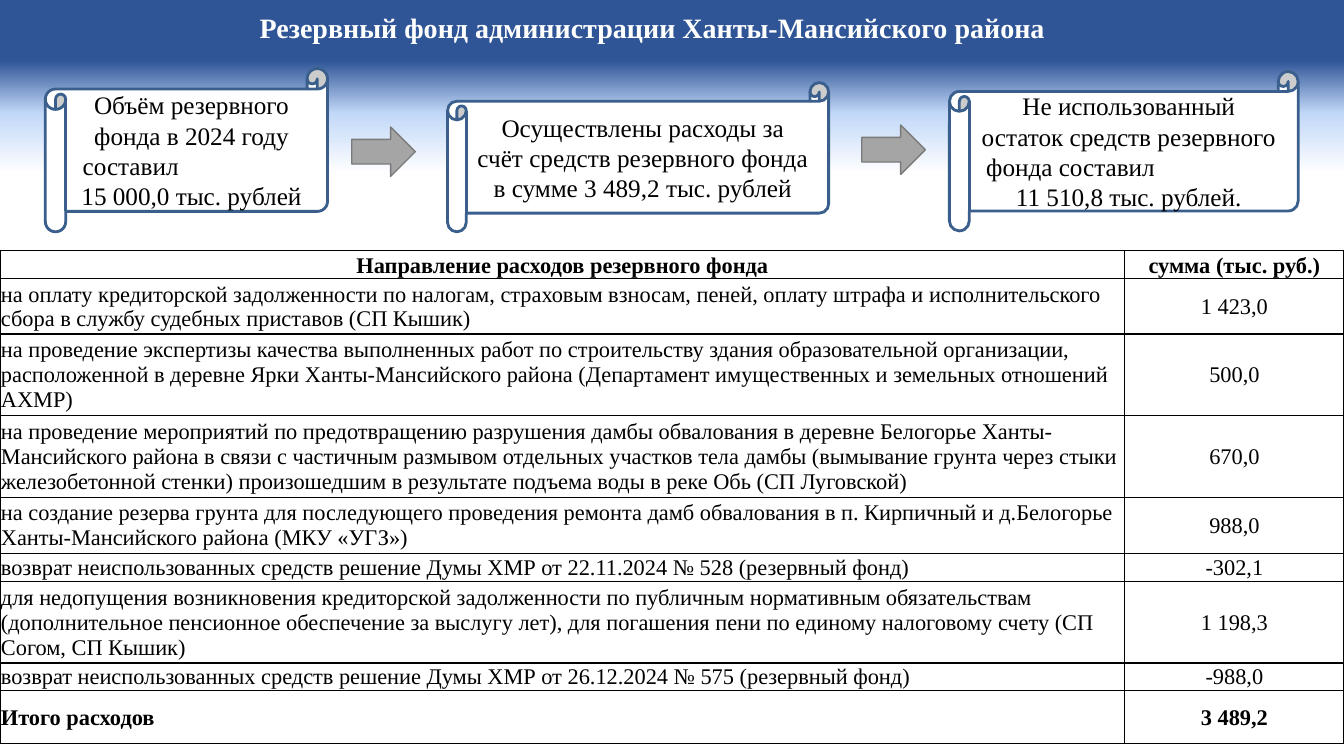
"""Build the slide on the reserve fund of the district administration."""
from copy import deepcopy

from lxml import etree
from pptx import Presentation
from pptx.dml.color import RGBColor
from pptx.enum.shapes import MSO_SHAPE
from pptx.enum.text import MSO_ANCHOR, MSO_AUTO_SIZE, PP_ALIGN
from pptx.oxml import parse_xml
from pptx.oxml.ns import nsdecls, qn
from pptx.util import Pt

SCROLL, ARROW = MSO_SHAPE.HORIZONTAL_SCROLL, MSO_SHAPE.RIGHT_ARROW
MIDDLE, BOTTOM = MSO_ANCHOR.MIDDLE, MSO_ANCHOR.BOTTOM
LEFT, CENTER = PP_ALIGN.LEFT, PP_ALIGN.CENTER
FIT_SHAPE = MSO_AUTO_SIZE.SHAPE_TO_FIT_TEXT
FONT = "Times New Roman"
NAVY = RGBColor(0x2F, 0x55, 0x97)
PALE = RGBColor(0xC2, 0xD8, 0xF8)
WHITE = RGBColor(0xFF, 0xFF, 0xFF)
BLACK = RGBColor(0x00, 0x00, 0x00)
OUTLINE = RGBColor(0x3A, 0x5F, 0x8C)
GREY = RGBColor(0xA5, 0xA5, 0xA5)
DARK_GREY = RGBColor(0x7A, 0x7A, 0x7A)


def format_text(p, size, color=BLACK, bold=False, align=CENTER):
    p.alignment = align
    for r in p.runs:
        r.font.name = FONT
        r.font.size = Pt(size)
        r.font.bold = bold
        r.font.color.rgb = color


def add_box(s, kind, box, fill, line, weight):
    sp = s.shapes.add_shape(kind, *[Pt(v) for v in box])
    sp.shadow.inherit = False
    sp.fill.solid()
    sp.fill.fore_color.rgb = fill
    sp.line.color.rgb = line
    sp.line.width = Pt(weight)
    return sp


prs = Presentation()
prs.slide_width, prs.slide_height = Pt(960), Pt(540)
s = prs.slides.add_slide(prs.slide_layouts[5])

fill = s.background.fill
fill.gradient()
fill.gradient_angle = 270
gs_list = s.element.find(".//" + qn("a:gsLst"))
gs_list.append(deepcopy(gs_list[-1]))
for stop, (position, color) in zip(fill.gradient_stops, [(0.08, NAVY), (0.15, PALE), (0.23, WHITE)]):
    stop.position = position
    stop.color.rgb = color

title = s.shapes.title
title.left, title.top, title.width, title.height = Pt(106), Pt(3.6), Pt(720), Pt(31.5)
tf = title.text_frame
tf.text = "Резервный фонд администрации Ханты-Мансийского района"
tf.word_wrap = True
tf.auto_size = FIT_SHAPE
format_text(tf.paragraphs[0], 20, WHITE, bold=True)

scrolls = [
    ((32.4, 49, 201.6, 116.6),
     [("Объём резервного фонда в 2024 году", CENTER), ("составил", LEFT), ("15 000,0 тыс. рублей", CENTER)]),
    ((319.7, 59, 272.2, 106.6),
     [("Осуществлены расходы за счёт средств резервного фонда в сумме 3 489,2 тыс. рублей", CENTER)]),
    ((678.2, 51.1, 249.1, 113.8),
     [("Не использованный остаток средств резервного", CENTER), ("фонда составил", LEFT),
      ("11 510,8 тыс. рублей.", CENTER)]),
]
for box, lines in scrolls:
    tf = add_box(s, SCROLL, box, WHITE, OUTLINE, 2).text_frame
    tf.word_wrap = True
    tf.vertical_anchor = MIDDLE
    for i, (text, align) in enumerate(lines):
        p = tf.paragraphs[0] if i == 0 else tf.add_paragraph()
        p.text = text
        format_text(p, 18, align=align)
        if align == LEFT:
            p._p.get_or_add_pPr().set("marL", str(Pt(5)))

for left, top in [(251.3, 90.7), (615.6, 89.3)]:
    add_box(s, ARROW, (left, top, 45.4, 35.3), GREY, DARK_GREY, 1)

rows = [
    ("Направление расходов резервного фонда", "сумма (тыс. руб.)", 20),
    ("на оплату кредиторской задолженности по налогам, страховым взносам, пеней, оплату штрафа и "
     "исполнительского сбора в службу судебных приставов (СП Кышик)", "1 423,0", 39.4),
    ("на проведение экспертизы качества выполненных работ по строительству здания образовательной "
     "организации, расположенной в деревне Ярки Ханты-Мансийского района (Департамент имущественных "
     "и земельных отношений АХМР)", "500,0", 58),
    ("на проведение мероприятий по предотвращению разрушения дамбы обвалования в деревне Белогорье "
     "Ханты-Мансийского района в связи с частичным размывом отдельных участков тела дамбы (вымывание "
     "грунта через стыки железобетонной стенки) произошедшим в результате подъема воды в реке Обь "
     "(СП Луговской)", "670,0", 58.4),
    ("на создание резерва грунта для последующего проведения ремонта дамб обвалования в п. Кирпичный "
     "и д.Белогорье Ханты-Мансийского района (МКУ «УГЗ»)", "988,0", 40),
    ("возврат неиспользованных средств решение Думы ХМР от 22.11.2024 № 528 (резервный фонд)",
     "-302,1", 19.6),
    ("для недопущения возникновения кредиторской задолженности по публичным нормативным обязательствам "
     "(дополнительное пенсионное обеспечение за выслугу лет), для погашения пени по единому налоговому "
     "счету (СП Согом, СП Кышик)", "1 198,3", 58.4),
    ("возврат неиспользованных средств решение Думы ХМР от 26.12.2024 № 575 (резервный фонд)",
     "-988,0", 19.8),
    ("Итого расходов", "3 489,2", 37.6),
]
last = len(rows) - 1
height = sum(row[2] for row in rows)
table = s.shapes.add_table(len(rows), 2, Pt(0), Pt(179.2), Pt(960), Pt(height)).table
table.first_row = table.horz_banding = False
table.columns[0].width, table.columns[1].width = Pt(803.5), Pt(156.5)
border = parse_xml(
    f'<a:ln {nsdecls("a")} w="{Pt(1)}"><a:solidFill><a:srgbClr val="{BLACK}"/></a:solidFill></a:ln>')

for i, (purpose, amount, row_height) in enumerate(rows):
    table.rows[i].height = Pt(row_height)
    for j, text in enumerate((purpose, amount)):
        cell = table.cell(i, j)
        cell.text = text
        cell.margin_left = cell.margin_right = cell.margin_top = Pt(0.7)
        cell.margin_bottom = Pt(0)
        cell.vertical_anchor = BOTTOM if i == 0 else MIDDLE
        format_text(cell.text_frame.paragraphs[0], 16, bold=i in (0, last),
                    align=CENTER if i == 0 or j == 1 else LEFT)
        if (i, j) == (last, 1):
            cell.fill.solid()
            cell.fill.fore_color.rgb = WHITE
        else:
            cell.fill.background()
        tc_pr = cell._tc.get_or_add_tcPr()
        for k, side in enumerate(("a:lnL", "a:lnR", "a:lnT", "a:lnB")):
            ln = etree.Element(qn(side), w=border.get("w"))
            ln.append(deepcopy(border[0]))
            tc_pr.insert(k, ln)

prs.save("out.pptx")
